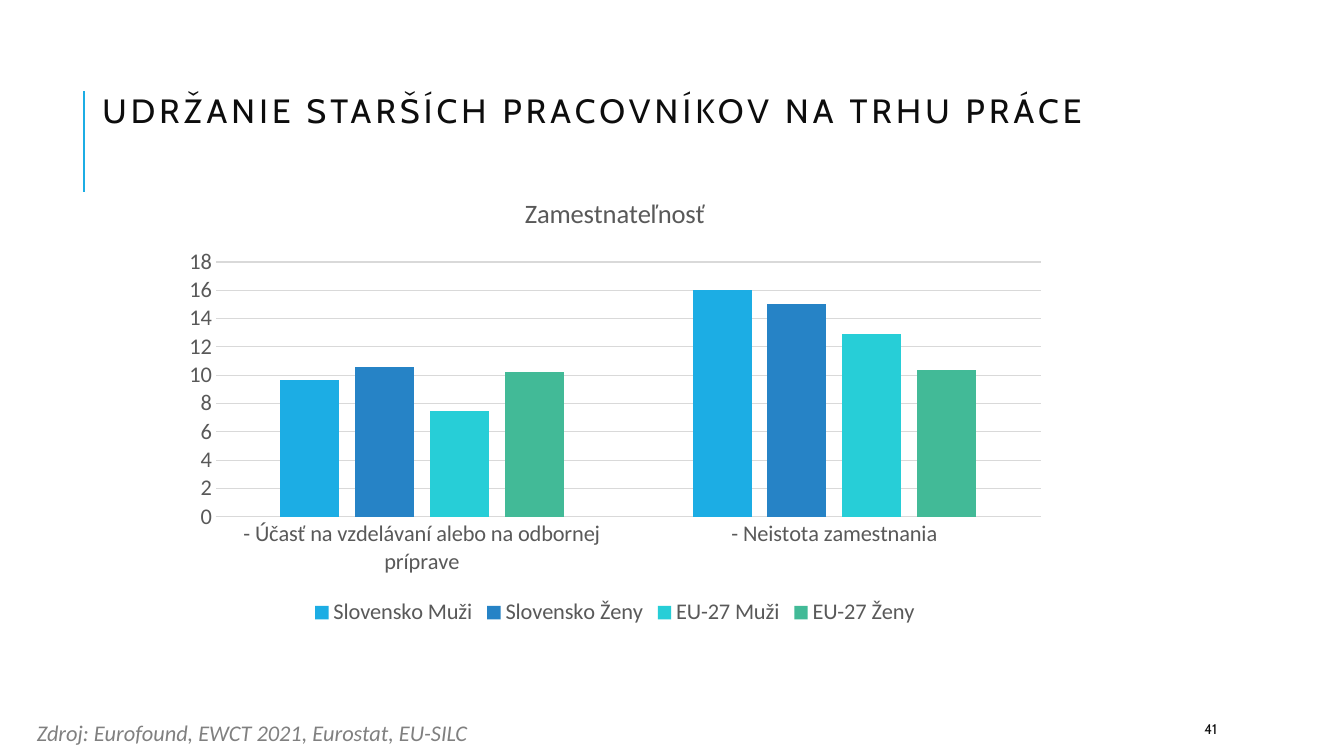
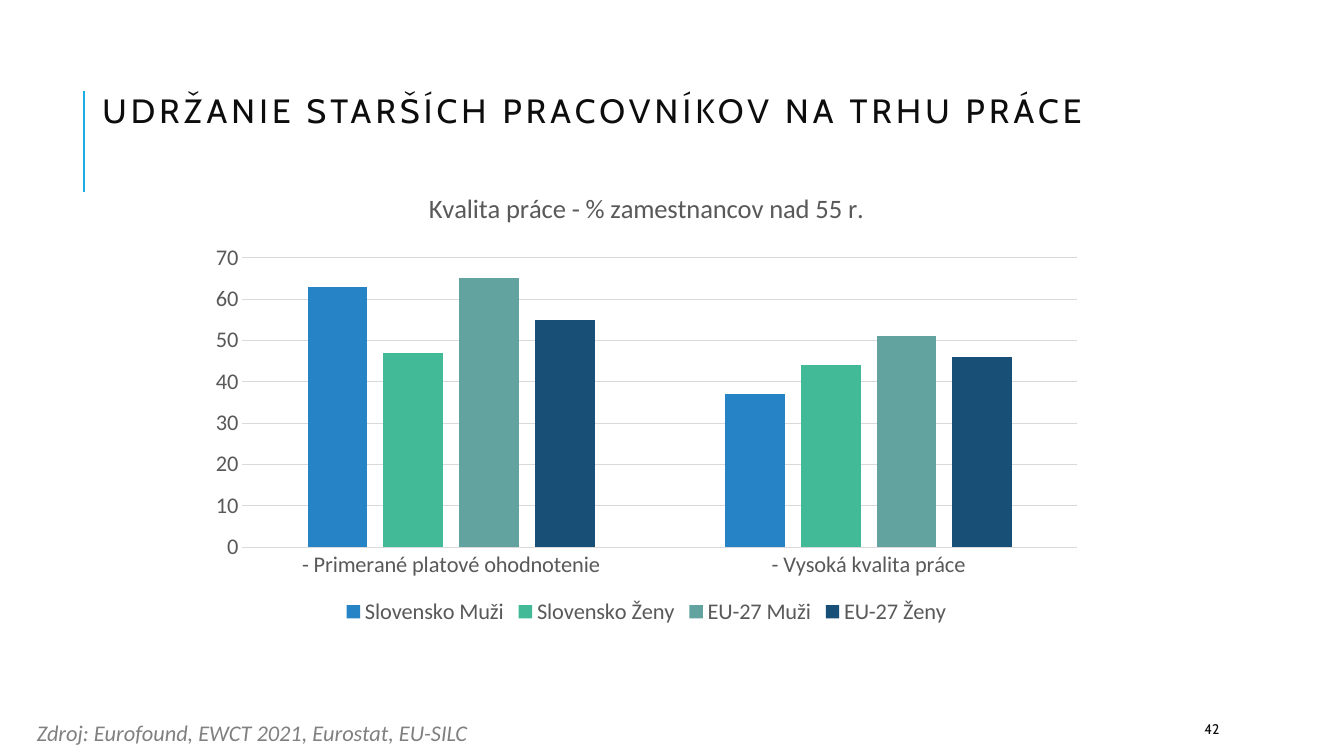
from lxml.etree import SubElement
from pptx import Presentation
from pptx.chart.data import CategoryChartData
from pptx.dml.color import RGBColor
from pptx.enum.chart import XL_CHART_TYPE, XL_LEGEND_POSITION, XL_TICK_MARK
from pptx.enum.shapes import MSO_CONNECTOR
from pptx.enum.text import MSO_ANCHOR
from pptx.oxml import parse_xml
from pptx.oxml.ns import nsdecls, qn
from pptx.util import Inches, Pt

COLUMNS, ROWS = 160, 90
HEADING = "UDRŽANIE STARŠÍCH PRACOVNÍKOV NA TRHU PRÁCE"
SOURCE = "Zdroj: Eurofound, EWCT 2021, Eurostat, EU-SILC"
GROUPS = ["Slovensko Muži", "Slovensko Ženy", "EU-27 Muži", "EU-27 Ženy"]
CONTENT = [
    dict(
        number=41,
        heading="Zamestnateľnosť",
        area=(20.4, 20.9, 105.6, 54.2),
        plot_height=0.56,
        topics=["- Účasť na vzdelávaní alebo na odbornej príprave",
                "- Neistota zamestnania"],
        values=[(9.7, 16), (10.6, 15), (7.5, 12.9), (10.2, 10.4)],
        colors=["1CADE4", "2683C6", "27CED7", "42BA97"],
    ),
    dict(
        number=42,
        heading="Kvalita práce - % zamestnancov nad 55 r.",
        area=(23.5, 20.3, 106.9, 54.7),
        plot_height=0.63,
        topics=["- Primerané platové ohodnotenie", "- Vysoká kvalita práce"],
        values=[(63, 37), (47, 44), (65, 51), (55, 46)],
        colors=["2683C6", "42BA97", "62A39F", "174F77"],
    ),
]


def color(hex_code):
    return RGBColor.from_string(hex_code)


def style_font(font, face, size, ink, italic=False):
    font.name = face
    font.size = Pt(size)
    font.bold = False
    font.italic = italic
    font.color.rgb = color(ink)


def write(frame, text, spacing=0, line_spacing=None, **style):
    paragraph = frame.paragraphs[0]
    paragraph.line_spacing = line_spacing
    run = paragraph.add_run()
    run.text = text
    style_font(run.font, **style)
    if spacing:
        run.font._element.set("spc", str(spacing * 100))


class Deck:
    title_style = dict(face="Cabin", size=24, ink="0D0D0D", spacing=3, line_spacing=0.8)
    number_style = dict(face="Cabin", size=10, ink="0D0D0D")
    source_style = dict(face="Calibri", size=16, ink="808080", italic=True)
    chart_style = dict(face="Calibri", size=16, ink="595959")
    chart_title_style = dict(chart_style, size=19)
    accent, grid = "1CADE4", "D9D9D9"

    def __init__(self):
        self.deck = Presentation()
        self.deck.slide_width = Inches(13.33)
        self.deck.slide_height = Inches(7.5)
        self.slide = None

    def x(self, columns):
        return round(self.deck.slide_width * columns / COLUMNS)

    def y(self, rows):
        return round(self.deck.slide_height * rows / ROWS)

    def box(self, left, top, width, height):
        return self.x(left), self.y(top), self.x(width), self.y(height)

    def text(self, area, text, wrap=True, anchor=MSO_ANCHOR.TOP, **style):
        frame = self.slide.shapes.add_textbox(*self.box(*area)).text_frame
        frame.word_wrap = wrap
        frame.vertical_anchor = anchor
        write(frame, text, **style)

    def rule(self, column, top, bottom):
        rule = self.slide.shapes.add_connector(
            MSO_CONNECTOR.STRAIGHT, self.x(column), self.y(bottom), self.x(column), self.y(top))
        rule.line.color.rgb = color(self.accent)
        rule.line.width = Pt(1.5)
        SubElement(rule._element.spPr, qn("a:effectLst"))

    def new_slide(self, number):
        self.slide = self.deck.slides.add_slide(self.deck.slide_layouts[6])
        self.rule(10, 10.8, 22.8)
        self.text((11, 11, 137.5, 7.3), HEADING, **self.title_style)
        self.text((142.2, 85, 12.7, 3.6), str(number),
                  anchor=MSO_ANCHOR.MIDDLE, **self.number_style)
        self.text((3.2, 85, 54.7, 4.4), SOURCE, wrap=False, **self.source_style)

    def grid_line(self, line):
        line.color.rgb = color(self.grid)
        line.width = Pt(0.75)

    def place_plot(self, chart, **shares):
        plot_area = chart._chartSpace.chart.plotArea
        for layout in plot_area.findall(qn("c:layout")):
            plot_area.remove(layout)
        settings = dict(layoutTarget="inner", xMode="edge", yMode="edge", **shares)
        tags = "".join(f'<c:{tag} val="{value}"/>' for tag, value in settings.items())
        plot_area.insert(0, parse_xml(
            f'<c:layout {nsdecls("c")}><c:manualLayout>{tags}</c:manualLayout></c:layout>'))

    def columns_chart(self, heading, area, plot_height, topics, values, colors):
        data = CategoryChartData(number_format="0.0")
        data.categories = topics
        for group, shares in zip(GROUPS, values):
            data.add_series(group, shares)
        chart = self.slide.shapes.add_chart(
            XL_CHART_TYPE.COLUMN_CLUSTERED, *self.box(*area), data).chart
        style_font(chart.font, **self.chart_style)
        chart.has_title = True
        write(chart.chart_title.text_frame, heading, **self.chart_title_style)
        chart.chart_title.include_in_layout = False
        chart.has_legend = True
        chart.legend.position = XL_LEGEND_POSITION.BOTTOM
        chart.legend.include_in_layout = False
        style_font(chart.legend.font, **self.chart_style)
        for axis in (chart.category_axis, chart.value_axis):
            axis.major_tick_mark = axis.minor_tick_mark = XL_TICK_MARK.NONE
            style_font(axis.tick_labels.font, **self.chart_style)
        self.grid_line(chart.category_axis.format.line)
        chart.value_axis.format.line.fill.background()
        chart.value_axis.minimum_scale = 0
        chart.value_axis.tick_labels.number_format = "0"
        chart.value_axis.tick_labels.number_format_is_linked = False
        self.grid_line(chart.value_axis.major_gridlines.format.line)
        plot = chart.plots[0]
        plot.gap_width, plot.overlap = 219, -27
        plot.vary_by_categories = False
        for series, fill in zip(plot.series, colors):
            series.format.fill.solid()
            series.format.fill.fore_color.rgb = color(fill)
            series.invert_if_negative = False
        self.place_plot(chart, x=0.05, y=0.19, w=0.93, h=plot_height)


def main():
    deck = Deck()
    for content in CONTENT:
        chart = dict(content)
        deck.new_slide(chart.pop("number"))
        deck.columns_chart(**chart)
    deck.deck.save("out.pptx")


if __name__ == "__main__":
    main()
